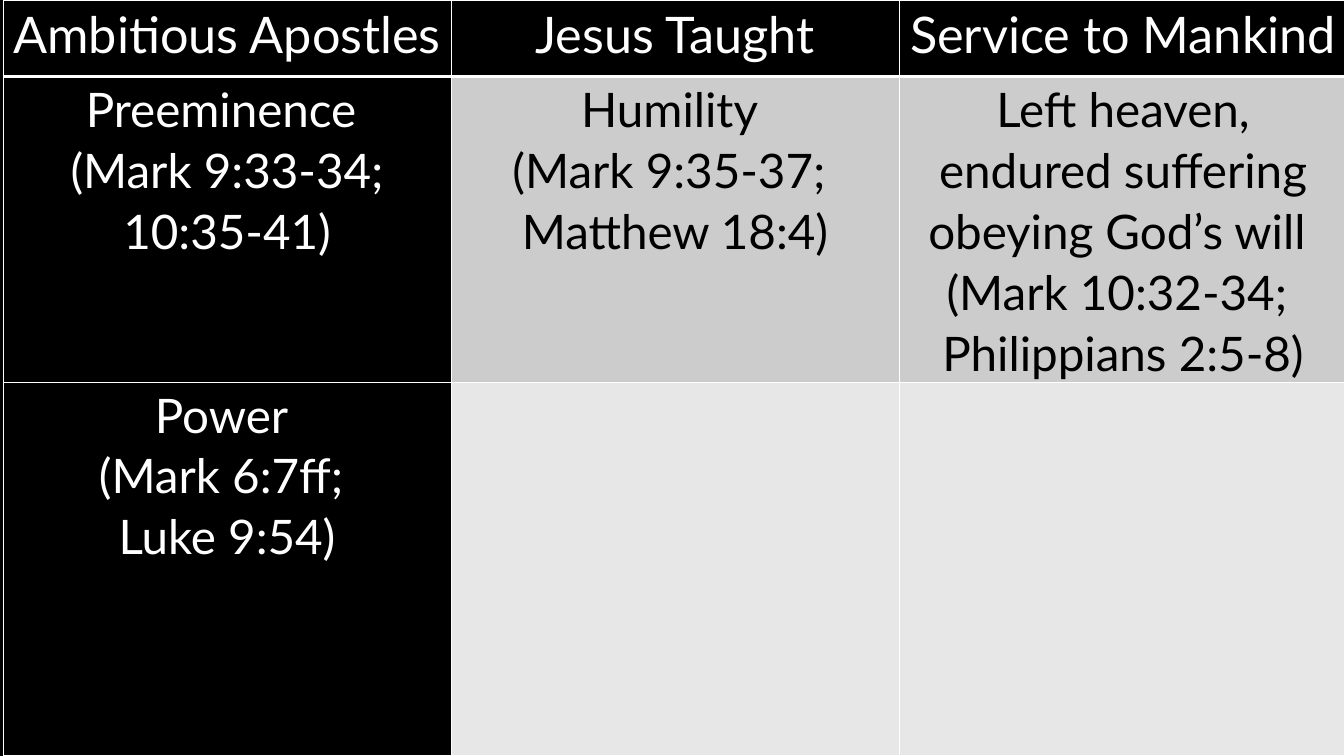
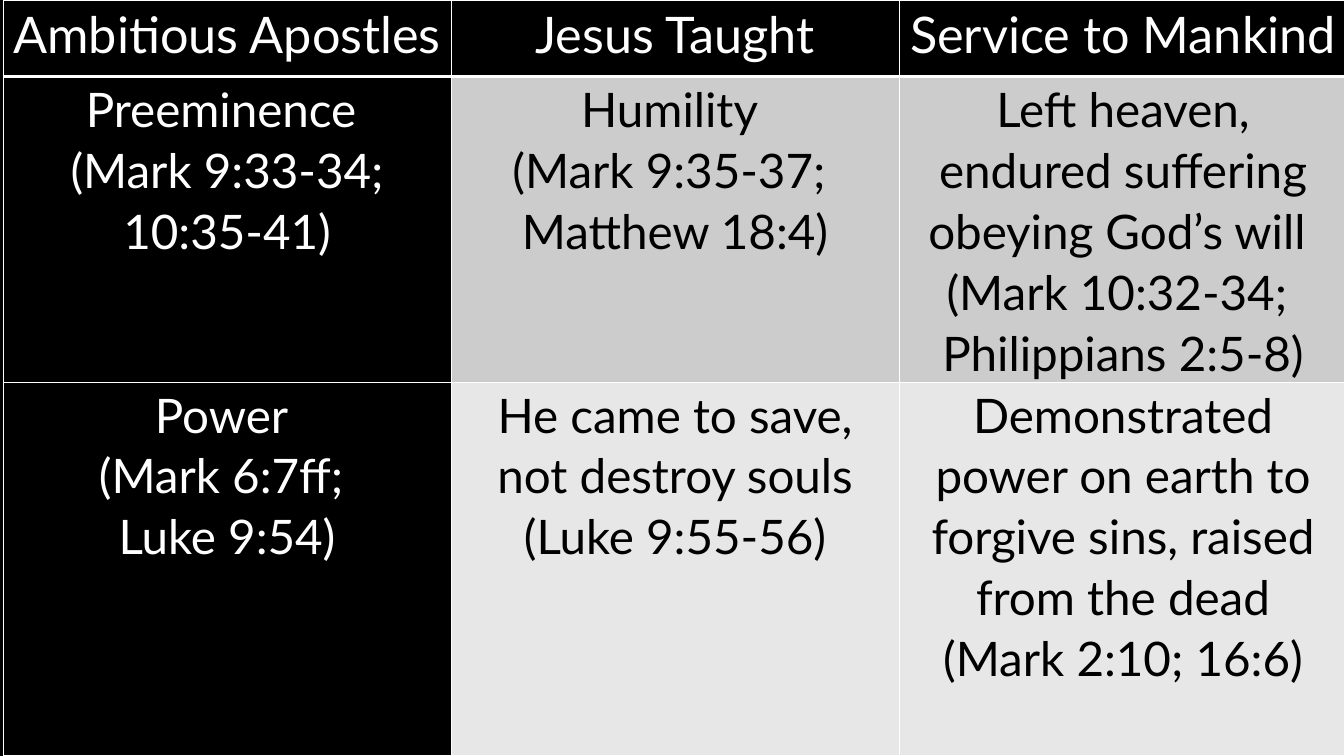
from dataclasses import dataclass

from lxml.etree import fromstring
from pptx import Presentation
from pptx.dml.color import RGBColor
from pptx.enum.text import PP_ALIGN
from pptx.oxml.ns import nsdecls
from pptx.util import Cm, Pt


@dataclass(frozen=True)
class Theme:
    black: str = "000000"
    white: str = "FFFFFF"
    bands: tuple = ("CCCCCC", "E7E7E7")
    font: str = "Lato"
    heading_size: int = 36
    body_size: int = 34
    line_spacing: float = 1.07
    thin_rule: int = 1
    heading_rule: int = 3


THEME = Theme()

# Trailing spaces are part of the wording and affect the centring.
HEADINGS = [["Ambitious Apostles"], ["Jesus Taught"], ["Service to Mankind"]]
PREEMINENCE = [
    ["Preeminence ", "(Mark 9:33-34; 10:35-41)"],
    ["Humility ", "(Mark 9:35-37; ", "Matthew 18:4)"],
    ["Left heaven, endured suffering obeying God’s will ",
     "(Mark 10:32-34; ", "Philippians 2:5-8)"],
]
POWER = ["Power ", "(Mark 6:7ff; ", "Luke 9:54)"]
POWER_ANSWERS = [
    ["He came to save, not destroy souls (Luke 9:55-56)"],
    ["Demonstrated power on earth to forgive sins, raised from the dead",
     "(Mark 2:10; 16:6)"],
]
SLIDES = [
    [HEADINGS, PREEMINENCE, [POWER, [], []]],
    [HEADINGS, PREEMINENCE, [POWER, *POWER_ANSWERS]],
]

SLIDE_WIDTH, SLIDE_HEIGHT = Cm(33.87), Cm(19.05)
TABLE_LEFT = Cm(0.08)
COLUMN_WIDTH = Cm(11.29)
ROW_HEIGHTS = [Cm(1.93), Cm(7.7), Cm(9.4)]
CELL_INSET = Cm(0.18)


def write(frame, paragraphs, *, size, color):
    for index, text in enumerate(paragraphs):
        paragraph = frame.add_paragraph() if index else frame.paragraphs[0]
        paragraph.alignment = PP_ALIGN.CENTER
        paragraph.line_spacing = THEME.line_spacing
        run = paragraph.add_run()
        run.text = text
        run.font.name = THEME.font
        run.font.size = Pt(size)
        run.font.bold = False
        run.font.color.rgb = RGBColor.from_string(color)


def set_borders(cell, widths):
    """Draw white borders; widths are points for left, right, top, bottom."""
    properties = cell._tc.get_or_add_tcPr()
    for index, (side, width) in enumerate(zip("LRTB", widths)):
        properties.insert(index, fromstring(
            f'<a:ln{side} {nsdecls("a")} w="{Pt(width)}"><a:solidFill>'
            f'<a:srgbClr val="{THEME.white}"/></a:solidFill></a:ln{side}>'))


def format_cell(cell, paragraphs, row, column):
    heading = row == 0
    dark = heading or column == 0
    fill = THEME.black if dark else THEME.bands[row - 1]
    cell.fill.solid()
    cell.fill.fore_color.rgb = RGBColor.from_string(fill)
    cell.margin_left = cell.margin_right = CELL_INSET
    cell.margin_top = cell.margin_bottom = 0
    thin, thick = THEME.thin_rule, THEME.heading_rule
    set_borders(cell, (thin, thin, thick if row == 1 else thin,
                       thick if heading else thin))
    write(cell.text_frame, paragraphs,
          size=THEME.heading_size if heading else THEME.body_size,
          color=THEME.white if dark else THEME.black)


def add_comparison(slide, rows):
    columns = len(HEADINGS)
    table = slide.shapes.add_table(
        len(rows), columns, TABLE_LEFT, 0,
        COLUMN_WIDTH * columns, sum(ROW_HEIGHTS)).table
    table.horz_banding = False
    for column in table.columns:
        column.width = COLUMN_WIDTH
    for row, (height, contents) in enumerate(zip(ROW_HEIGHTS, rows)):
        table.rows[row].height = height
        for column, paragraphs in enumerate(contents):
            format_cell(table.cell(row, column), paragraphs, row, column)


def main():
    deck = Presentation()
    deck.slide_width, deck.slide_height = SLIDE_WIDTH, SLIDE_HEIGHT
    background = deck.slide_master.background.fill
    background.solid()
    background.fore_color.rgb = RGBColor.from_string(THEME.black)
    blank = deck.slide_layouts[6]
    for rows in SLIDES:
        add_comparison(deck.slides.add_slide(blank), rows)
    deck.save("out.pptx")


if __name__ == "__main__":
    main()
